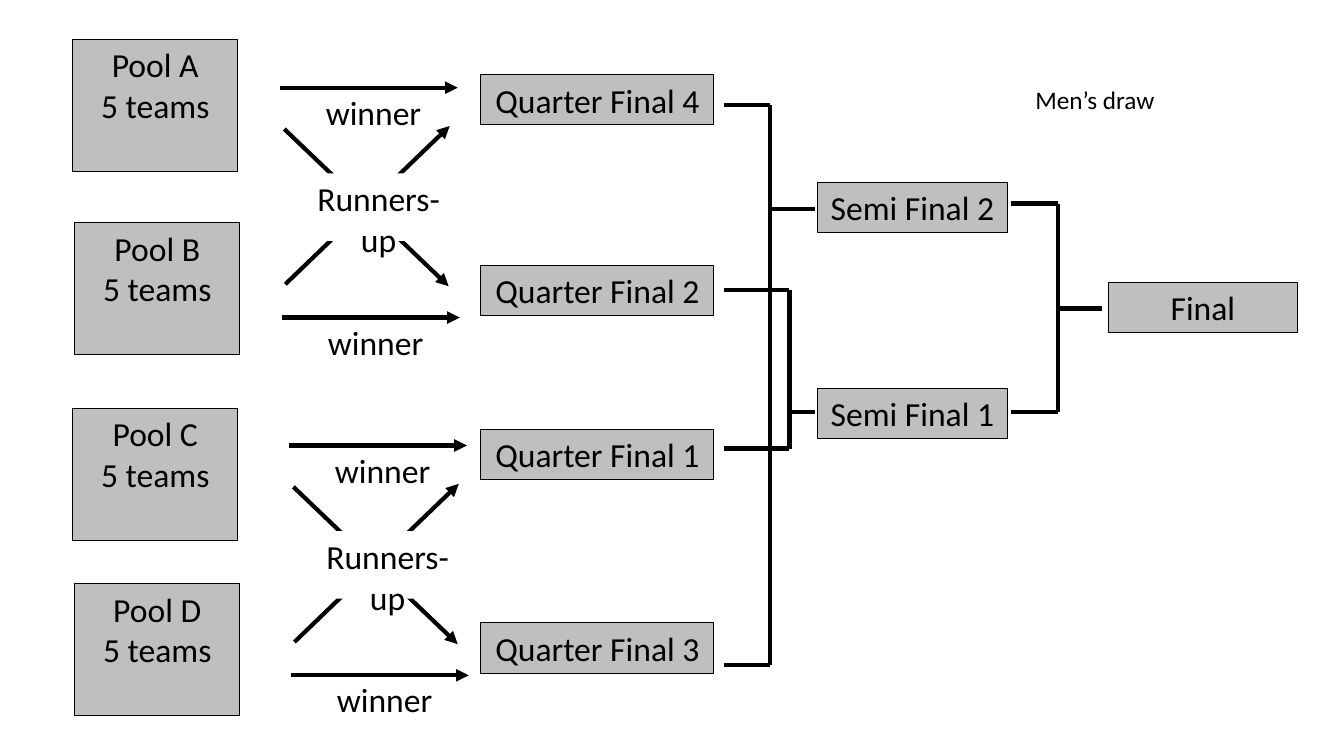
from lxml import etree
from pptx import Presentation
from pptx import util as u
from pptx.dml import color
from pptx.enum import shapes, text
from pptx.oxml import ns


def rgb(value):
    return color.RGBColor.from_string(value)


class DrawSlide:
    font = "Calibri"
    ink = "000000"
    box_fill = "BFBFBF"
    paper = "FFFFFF"

    def __init__(self, presentation):
        self.slide = presentation.slides.add_slide(presentation.slide_layouts[6])

    def add_lines(self, shape, lines, size=24, align=text.PP_ALIGN.CENTER, wrap=True):
        frame = shape.text_frame
        frame.word_wrap = wrap
        frame.vertical_anchor = text.MSO_ANCHOR.TOP
        for index, line in enumerate(lines):
            paragraph = frame.add_paragraph() if index else frame.paragraphs[0]
            paragraph.alignment = align
            run = paragraph.add_run()
            run.text = line
            run.font.name = self.font
            run.font.size = u.Pt(size)
            run.font.color.rgb = rgb(self.ink)

    def box(self, x, y, width, height, *lines, fill=box_fill, outlined=True):
        shape = self.slide.shapes.add_shape(
            shapes.MSO_SHAPE.RECTANGLE, *map(u.Inches, (x, y, width, height)))
        shape.shadow.inherit = False
        shape.fill.solid()
        shape.fill.fore_color.rgb = rgb(fill)
        if outlined:
            shape.line.color.rgb = rgb(self.ink)
            shape.line.width = u.Pt(0.75)
        else:
            shape.line.fill.background()
        self.add_lines(shape, lines)

    def label(self, x, y, width, height, words, **style):
        self.add_lines(self.slide.shapes.add_textbox(
            *map(u.Inches, (x, y, width, height))), [words], **style)

    def line(self, x1, y1, x2, y2, arrow=False):
        connector = self.slide.shapes.add_connector(
            shapes.MSO_CONNECTOR.STRAIGHT, *map(u.Inches, (x1, y1, x2, y2)))
        connector.line.color.rgb = rgb(self.ink)
        connector.line.width = u.Pt(3)
        properties = connector.element.spPr
        if arrow:
            etree.SubElement(properties.get_or_add_ln(),
                             ns.qn("a:tailEnd"), type="triangle")
        etree.SubElement(properties, ns.qn("a:effectLst"))

    def winner(self, x, y):
        self.line(x, y, x + 1.76, y, arrow=True)
        self.label(x + 0.14, y - 0.01, 1.57, 0.67, "winner")

    def pool_pair(self, dx, dy):
        self.winner(2.78 + dx, 0.87 + dy)
        self.winner(2.8 + dx, 3.15 + dy)
        self.line(2.83 + dx, 2.82 + dy, 4.46 + dx, 1.25 + dy, arrow=True)
        self.line(2.82 + dx, 1.28 + dy, 4.45 + dx, 2.84 + dy, arrow=True)
        self.box(2.92 + dx, 1.72 + dy, 1.67, 0.67, "Runners-up",
                 fill=self.paper, outlined=False)

    def bracket(self, left, spine, right, top, bottom, middle):
        for y in (top, bottom):
            self.line(left, y, spine, y)
        self.line(spine, top, spine, bottom)
        self.line(spine, middle, right, middle)


def main():
    presentation = Presentation()
    presentation.slide_width = u.Inches(13.33)
    presentation.slide_height = u.Inches(7.5)
    draw = DrawSlide(presentation)

    for pool, x, y in (("A", 0.72, 0.39), ("B", 0.74, 2.21),
                       ("C", 0.72, 4.05), ("D", 0.74, 5.79)):
        draw.box(x, y, 1.64, 1.31, f"Pool {pool}", "5 teams")

    for dx, dy in ((0, 0), (0.09, 3.55)):
        draw.pool_pair(dx, dy)

    for quarter, y in ((4, 0.74), (2, 2.63), (1, 4.26), (3, 6.18)):
        draw.box(4.77, y, 2.31, 0.5, f"Quarter Final {quarter}")

    draw.bracket(7.18, 7.83, 8.08, 2.88, 4.45, 4.09)
    draw.bracket(7.18, 7.64, 8.08, 1.04, 6.6, 2.07)

    for semi, y in ((2, 1.81), (1, 3.85)):
        draw.box(8.11, y, 1.88, 0.5, f"Semi Final {semi}")

    draw.bracket(10.03, 10.49, 10.93, 2.02, 4.09, 3.06)
    draw.box(10.99, 2.8, 1.88, 0.5, "Final")
    draw.label(10.17, 0.79, 1.4, 0.4, "Men’s draw", size=18,
               align=text.PP_ALIGN.LEFT, wrap=False)

    presentation.save("out.pptx")


if __name__ == "__main__":
    main()
